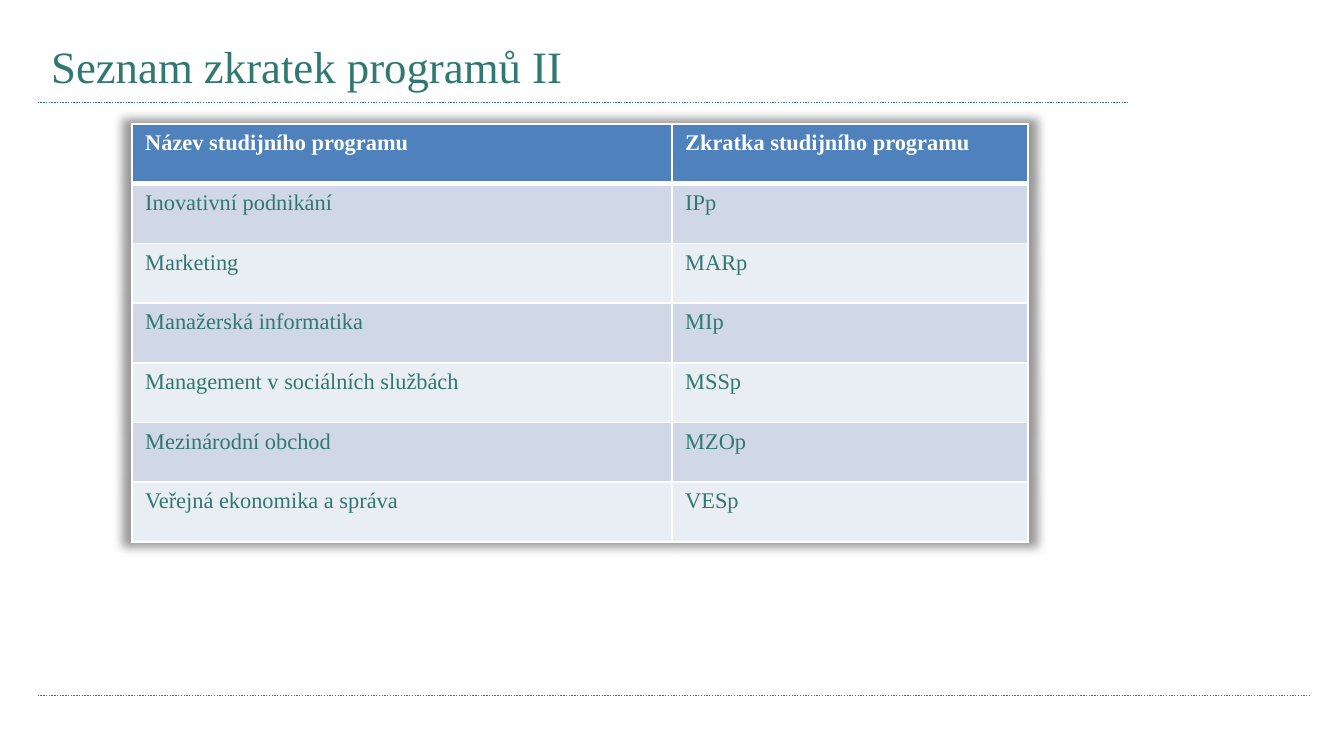
from dataclasses import dataclass

from lxml import etree
from pptx import Presentation
from pptx.dml.color import RGBColor
from pptx.enum import dml, shapes, text
from pptx.oxml import ns, parse_xml
from pptx.util import Pt


@dataclass(frozen=True)
class Theme:
    font: str = "Times New Roman"
    green: str = "307871"
    white: str = "FFFFFF"
    header: str = "4F81BD"
    bands: tuple = ("D0D8E8", "E9EDF4")
    title_size: float = 24
    table_size: float = 12
    rule_width: float = 0.75
    border: float = 1
    header_border: float = 3


THEME = Theme()
PROGRAMMES = [
    ("Název studijního programu", "Zkratka studijního programu"),
    ("Inovativní podnikání", "IPp"),
    ("Marketing", "MARp"),
    ("Manažerská informatika", "MIp"),
    ("Management v sociálních službách", "MSSp"),
    ("Mezinárodní obchod", "MZOp"),
    ("Veřejná ekonomika a správa", "VESp"),
]
COLUMN_WIDTHS = (289.3, 190.7)
ROW_HEIGHT = 32


def format_font(font, size, color, bold=False):
    values = {"name": THEME.font, "size": Pt(size), "bold": bold}
    for attribute, value in values.items():
        setattr(font, attribute, value)
    font.color.rgb = RGBColor.from_string(color)


def add_title(slide, wording):
    heading = slide.shapes.title
    place = {"left": 20.2, "top": 15.1, "width": 357.1, "height": 40.3}
    for attribute, value in place.items():
        setattr(heading, attribute, Pt(value))
    frame = heading.text_frame
    frame.text = wording
    frame.vertical_anchor = text.MSO_ANCHOR.MIDDLE
    frame.word_wrap = True
    paragraph = frame.paragraphs[0]
    paragraph.alignment = text.PP_ALIGN.LEFT
    format_font(paragraph.runs[0].font, THEME.title_size, THEME.green)


def add_rule(slide, right, y):
    rule = slide.shapes.add_connector(
        shapes.MSO_CONNECTOR.STRAIGHT, Pt(20.2), Pt(y), Pt(right), Pt(y))
    rule.line.color.rgb = RGBColor.from_string(THEME.green)
    rule.line.width = Pt(THEME.rule_width)
    rule.line.dash_style = dml.MSO_LINE.ROUND_DOT
    etree.SubElement(rule._element.spPr, ns.qn("a:effectLst"))


def set_borders(cell, top, bottom):
    widths = {"L": THEME.border, "R": THEME.border, "T": top, "B": bottom}
    properties = cell._tc.get_or_add_tcPr()
    for index, (side, width) in enumerate(widths.items()):
        properties.insert(index, parse_xml(
            f'<a:ln{side} {ns.nsdecls("a")} w="{Pt(width)}"><a:solidFill>'
            f'<a:srgbClr val="{THEME.white}"/></a:solidFill></a:ln{side}>'))


def add_table_shadow(table):
    table._tbl.tblPr.insert(0, parse_xml(
        f'<a:effectLst {ns.nsdecls("a")}>'
        f'<a:outerShdw blurRad="{Pt(5)}" sx="102000" sy="102000" algn="ctr" '
        'rotWithShape="0"><a:srgbClr val="000000"><a:alpha val="40000"/>'
        '</a:srgbClr></a:outerShdw></a:effectLst>'))


def fill_cell(cell, wording, row):
    is_header = row == 0
    fill = THEME.header if is_header else THEME.bands[(row - 1) % 2]
    cell.fill.solid()
    cell.fill.fore_color.rgb = RGBColor.from_string(fill)
    cell.text = wording
    format_font(cell.text_frame.paragraphs[0].runs[0].font, THEME.table_size,
                THEME.white if is_header else THEME.green, is_header)
    set_borders(cell,
                top=THEME.header_border if row == 1 else THEME.border,
                bottom=THEME.header_border if is_header else THEME.border)


def add_programme_table(slide, programmes):
    table = slide.shapes.add_table(
        len(programmes), len(COLUMN_WIDTHS), Pt(70.6), Pt(66.5),
        Pt(sum(COLUMN_WIDTHS)), Pt(ROW_HEIGHT * len(programmes))).table
    for column, width in zip(table.columns, COLUMN_WIDTHS):
        column.width = Pt(width)
    for row, programme in enumerate(programmes):
        table.rows[row].height = Pt(ROW_HEIGHT)
        for column, wording in enumerate(programme):
            fill_cell(table.cell(row, column), wording, row)
    add_table_shadow(table)


def main():
    deck = Presentation()
    deck.slide_width, deck.slide_height = Pt(720), Pt(405)
    slide = deck.slides.add_slide(deck.slide_layouts[5])

    # Rules under the title and above the footer
    add_rule(slide, right=604, y=55.1)
    add_rule(slide, right=702, y=372.5)

    # Title and list of programmes
    add_title(slide, "Seznam zkratek programů II")
    add_programme_table(slide, PROGRAMMES)

    deck.save("out.pptx")


if __name__ == "__main__":
    main()
